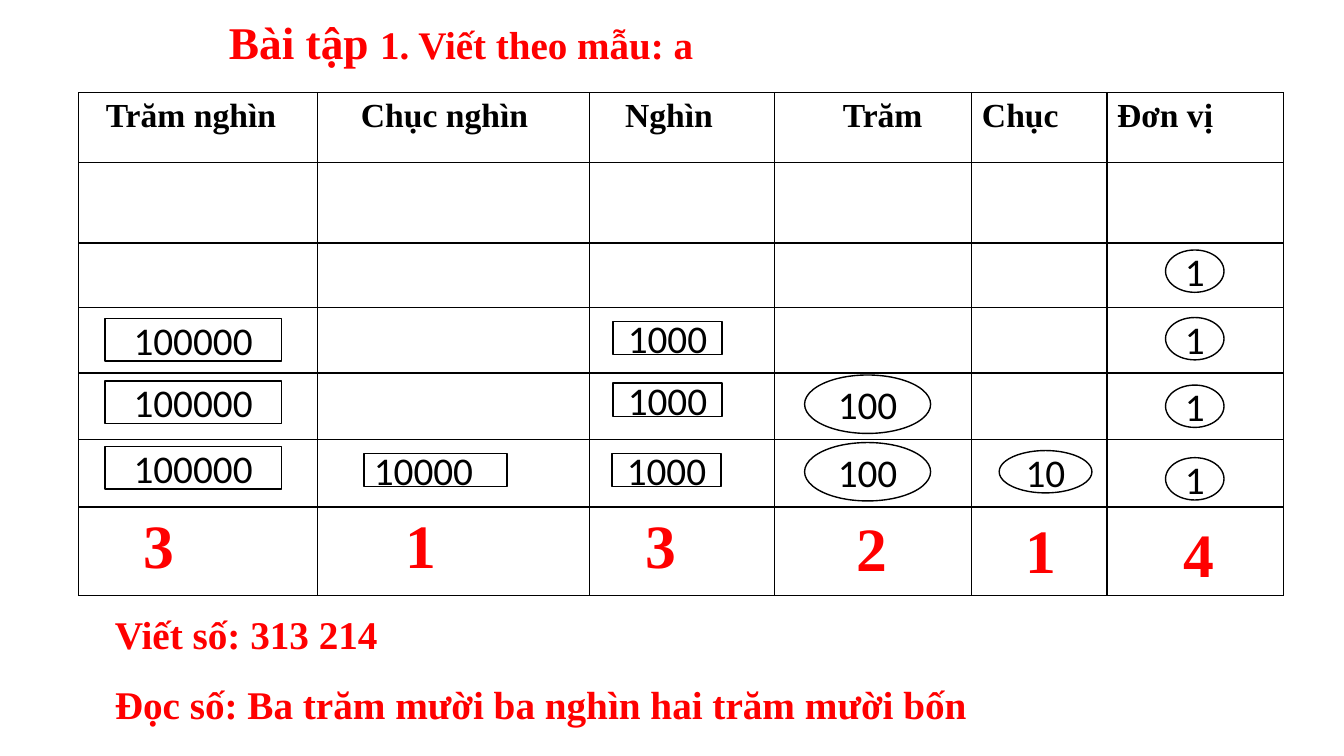
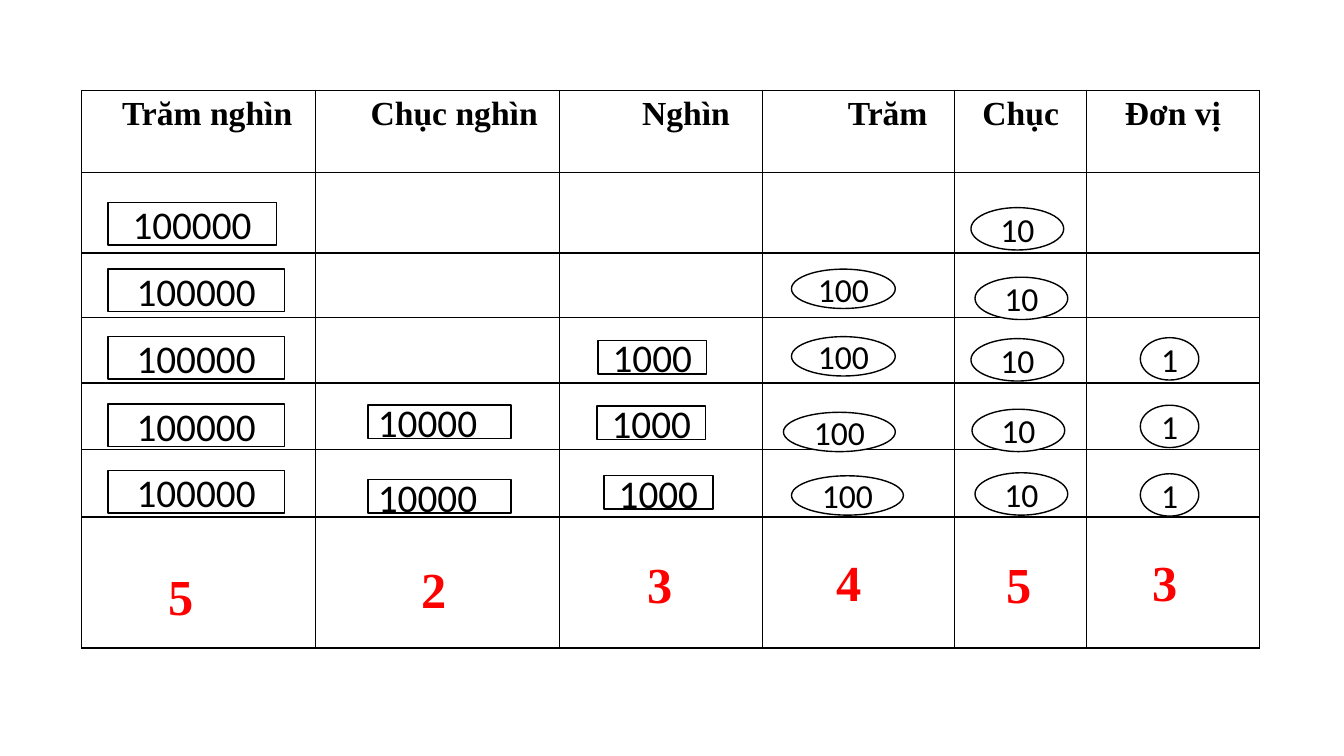
from lxml.etree import SubElement
from pptx import Presentation
from pptx.dml.color import RGBColor
from pptx.enum.shapes import MSO_SHAPE as Shape
from pptx.enum.text import MSO_ANCHOR as Anchor, MSO_AUTO_SIZE as AutoSize, PP_ALIGN as Align
from pptx.oxml.ns import qn
from pptx.util import Emu, Pt

PX = 9144  # EMU per px, 100 px to the inch
BLACK, WHITE, RED = "000000", "FFFFFF", "FF0000"
SERIF, SANS = "Times New Roman", "Calibri"
PLACES = ["Trăm nghìn", "Chục nghìn", "Nghìn", "Trăm", "Chục", "Đơn vị"]
CELL_MARGIN = 10
CHIP_SIZES = {
    "100000": (175, 42), "10000": (142, 33), "1000": (108, 33),
    "100": (125, 58), "10": (92, 42), "1": (58, 42),
}


def px(*lengths):
    return [Emu(length * PX) for length in lengths]


def colour(hex_string):
    return RGBColor.from_string(hex_string)


class Lesson:
    def __init__(self):
        self.deck = Presentation()
        self.deck.slide_width, self.deck.slide_height = px(1333, 750)
        self.slide = None

    def add_slide(self, layout_name):
        layout = self.deck.slide_layouts.get_by_name(layout_name)
        self.slide = self.deck.slides.add_slide(layout)

    def style(self, paragraph, face, ink, size=None, bold=False, align=Align.LEFT):
        paragraph.alignment = align
        font = paragraph.font
        font.name, font.bold, font.color.rgb = face, bold, colour(ink)
        if size:
            font.size = Pt(size)

    def title(self, box, parts):
        """Fill the title placeholder with (text, size) parts on one line."""
        heading = self.slide.shapes.title
        heading.left, heading.top, heading.width, heading.height = px(*box)
        frame = heading.text_frame
        frame.auto_size, frame.vertical_anchor = AutoSize.NONE, Anchor.MIDDLE
        line = frame.paragraphs[0]
        line.line_spacing = 0.9
        self.style(line, SERIF, RED, bold=True)
        for words, size in parts:
            run = line.add_run()
            run.text, run.font.size = words, Pt(size)

    def text(self, box, lines, size, spacing=None):
        frame = self.slide.shapes.add_textbox(*px(*box)).text_frame
        frame.word_wrap, frame.auto_size = True, AutoSize.SHAPE_TO_FIT_TEXT
        frame.text = "\n".join(lines)
        for paragraph in frame.paragraphs:
            self.style(paragraph, SERIF, RED, size, bold=True)
            if spacing:
                paragraph.line_spacing = spacing

    def border(self, cell):
        properties = cell._tc.get_or_add_tcPr()
        for side in ("lnL", "lnR", "lnT", "lnB"):
            edge = SubElement(properties, qn(f"a:{side}"), w=str(Pt(1)))
            fill = SubElement(edge, qn("a:solidFill"))
            SubElement(fill, qn("a:srgbClr"), val=BLACK)

    def place_table(self, corner, widths, heights, indents, align):
        """Draw the place-value grid; indents shift the column headings."""
        box = (*corner, sum(widths), sum(heights))
        grid = self.slide.shapes.add_table(len(heights), len(widths), *px(*box)).table
        grid.first_row = grid.horz_banding = False
        for column, width in zip(grid.columns, px(*widths)):
            column.width = width
        for row, height in zip(grid.rows, px(*heights)):
            row.height = height
        for cell in grid.iter_cells():
            self.border(cell)
            cell.fill.background()
        for column, (place, indent) in enumerate(zip(PLACES, indents)):
            heading = grid.cell(0, column)
            heading.text = place
            heading.margin_left, = px(CELL_MARGIN + indent)
            self.style(heading.text_frame.paragraphs[0], SERIF, BLACK, 24, True, align)

    def chips(self, value, spots, text_size=28, chip_size=None):
        """Put one number chip at each spot: boxes from 1000 up, ovals below."""
        outline = Shape.RECTANGLE if int(value) >= 1000 else Shape.OVAL
        align = Align.LEFT if value == "10000" else Align.CENTER
        for spot in spots:
            box = (*spot, *(chip_size or CHIP_SIZES[value]))
            chip = self.slide.shapes.add_shape(outline, *px(*box))
            chip.shadow.inherit = False
            chip.fill.solid()
            chip.fill.fore_color.rgb = colour(WHITE)
            chip.line.color.rgb, chip.line.width = colour(BLACK), Pt(1)
            frame = chip.text_frame
            frame.text, frame.vertical_anchor = value, Anchor.MIDDLE
            self.style(frame.paragraphs[0], SANS, BLACK, text_size, align=align)

    def digits(self, number, spots, size, height):
        for digit, spot in zip(number, spots):
            self.text((*spot, 117, height), [digit], size)


def sample_slide(lesson):
    lesson.add_slide("Title Only")
    lesson.title((217, 0, 900, 88), [("Bài tập ", 32.4), ("1. Viết theo mẫu: a", 27.9)])
    lesson.place_table((78, 92), [237, 270, 183, 196, 134, 175],
                       [69, 80, 64, 65, 66, 67, 88], [17, 33, 25, 58, 0, 0], Align.LEFT)
    lesson.chips("100000", [(104, y) for y in (316, 378, 443)])
    lesson.chips("10000", [(361, 450)])
    lesson.chips("1000", [(608, 319), (608, 380), (607, 450)])
    lesson.chips("100", [(798, y) for y in (372, 439)])
    lesson.chips("10", [(991, 447)])
    lesson.chips("1", [(1156, y) for y in (248, 315, 382, 454)])
    lesson.digits("313214", [(133, 498), (392, 498), (630, 498),
                             (840, 501), (1007, 503), (1164, 507)], 44, 84)
    lesson.text((104, 577, 979, 151),
                ["Viết số: 313 214", "Đọc số: Ba trăm mười ba nghìn hai trăm mười bốn"],
                28, spacing=1.5)


def practice_slide(lesson):
    lesson.add_slide("Blank")
    lesson.place_table((81, 90), [232, 242, 201, 191, 131, 171],
                       [81, 80, 64, 65, 66, 67, 130], [17, 33, 50, 58, 0, 0], Align.CENTER)
    lesson.chips("100000", [(107, 201)], chip_size=(167, 42))
    lesson.chips("100000", [(107, y) for y in (267, 334, 401, 467)])
    lesson.chips("10000", [(365, y) for y in (402, 476)])
    lesson.chips("1000", [(593, 338), (592, 403), (599, 472)])
    lesson.chips("100", [(785, y) for y in (267, 334)], 24, (103, 39))
    lesson.chips("100", [(777, 409), (785, 472)], 24, (111, 39))
    lesson.chips("10", [(963, 206), (967, 275), (963, 336), (964, 406), (967, 469)], 24)
    lesson.chips("1", [(1131, y) for y in (335, 402, 470)], 24)
    lesson.digits("523453", [(157, 556), (408, 549), (632, 544),
                             (820, 542), (988, 544), (1133, 542)], 36, 71)


def main():
    lesson = Lesson()
    sample_slide(lesson)
    practice_slide(lesson)
    lesson.deck.save("out.pptx")


if __name__ == "__main__":
    main()
